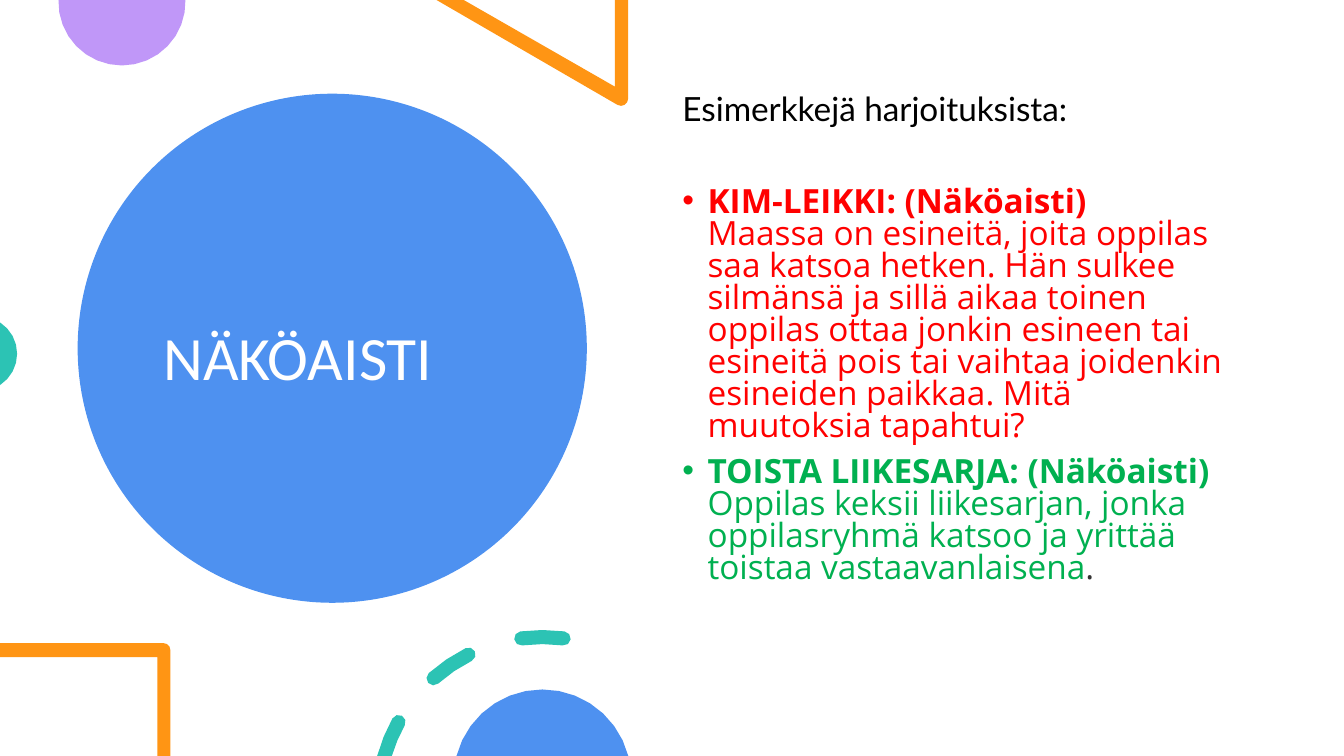
from math import cos, radians, sin

from lxml.etree import SubElement
from pptx import Presentation
from pptx.dml.color import RGBColor
from pptx.enum.shapes import MSO_SHAPE
from pptx.enum.text import MSO_ANCHOR, PP_ALIGN
from pptx.oxml.ns import qn
from pptx.util import Inches, Pt

TITLE = "NÄKÖAISTI"
INTRO = "Esimerkkejä harjoituksista:"
EXERCISES = [
    ("KIM-LEIKKI: (Näköaisti)",
     "Maassa on esineitä, joita oppilas saa katsoa hetken. Hän sulkee silmänsä ja "
     "sillä aikaa toinen oppilas ottaa jonkin esineen tai esineitä pois tai vaihtaa "
     "joidenkin esineiden paikkaa. Mitä muutoksia tapahtui?", "", "FF0000"),
    ("TOISTA LIIKESARJA: (Näköaisti)",
     "Oppilas keksii liikesarjan, jonka oppilasryhmä katsoo ja yrittää toistaa "
     "vastaavanlaisena", ".", "00B050"),
]
BLUE, PURPLE, ORANGE, TEAL = "4E91F0", "C097F8", "FF9514", "2CC3B4"
BODY_SIZE = 23.8
LINE_SPACING = 0.8

# Circles cut by the slide edge: centre, radius, start and end angle, steps, colour
CUT_CIRCLES = [
    ((1.21, 0.02), 0.63, -2, 182, 16, PURPLE),
    ((-0.2, 3.51), 0.37, -57, 57, 8, TEAL),
    ((5.38, 7.72), 0.88, 194.5, 345.5, 14, BLUE),
]
RING_CENTER, RING_RADIUS, DASH_HALF = (5.38, 7.95), 1.63, 0.07
# Dashes: outer start, inner start, end angle, whether the start is rounded
DASHES = [(195.4, 196.8, 208.9, False), (228.5, 228.5, 243.3, True),
          (262.6, 262.6, 277.4, True)]


def color(value):
    return RGBColor.from_string(value)


def arc(center, radius, start, end, steps):
    """Points along an arc; angles in degrees, clockwise from the right."""
    angles = [radians(start + (end - start) * i / steps) for i in range(steps + 1)]
    return [(center[0] + radius * cos(a), center[1] + radius * sin(a)) for a in angles]


def dash_outline(outer_start, inner_start, end, rounded):
    def cap(angle, turn):
        middle = arc(RING_CENTER, RING_RADIUS, angle, angle, 1)[0]
        return arc(middle, DASH_HALF, turn, turn + 180, 4)

    def side(offset, start):
        return arc(RING_CENTER, RING_RADIUS + offset, start, end, 2)

    # The caps already hold the corner points they share with the sides
    points = side(DASH_HALF, outer_start)[:-1] + cap(end, end)
    points += side(-DASH_HALF, inner_start)[1::-1]
    return points + (cap(inner_start, inner_start + 180)[1:-1] if rounded else [])


def paint(shape, fill):
    shape.shadow.inherit = False
    shape.fill.solid()
    shape.fill.fore_color.rgb = color(fill)
    shape.line.fill.background()


def add_outline(page, contours, fill):
    contours = [[(Inches(x), Inches(y)) for x, y in points] for points in contours]
    builder = page.shapes.build_freeform(*contours[0][0])
    builder.add_line_segments(contours[0][1:], close=True)
    for points in contours[1:]:
        builder.move_to(*points[0])
        builder.add_line_segments(points[1:], close=True)
    paint(builder.convert_to_shape(), fill)


def format_run(run, font, size, fill, bold=False):
    run.font.name = font
    run.font.size = Pt(size)
    run.font.color.rgb = color(fill)
    run.font.bold = bold


def add_bullet(para):
    properties = para._p.get_or_add_pPr()
    properties.set("marL", str(Inches(0.25)))
    properties.set("indent", str(-Inches(0.25)))
    SubElement(properties, qn("a:buFont")).set("typeface", "Arial")
    SubElement(properties, qn("a:buChar")).set("char", "•")


def add_title(page):
    title = page.shapes.title
    title.left, title.top = Inches(1.52), Inches(1.35)
    title.width, title.height = Inches(3.54), Inches(4.45)
    frame = title.text_frame
    frame.text = TITLE
    frame.vertical_anchor = MSO_ANCHOR.MIDDLE
    para = frame.paragraphs[0]
    para.alignment = PP_ALIGN.LEFT
    para.line_spacing = 0.9
    format_run(para.runs[0], "Calibri", 44, "FFFFFF")


def add_exercises(page):
    box = page.shapes.add_textbox(Inches(6.67), Inches(0.9), Inches(5.75), Inches(5.35))
    frame = box.text_frame
    frame.word_wrap = True
    frame.text = INTRO
    format_run(frame.paragraphs[0].runs[0], "Lato", BODY_SIZE, "000000")
    for heading, description, ending, fill in EXERCISES:
        para = frame.add_paragraph()
        para.text = f"{heading}\v{description}"
        for run, bold in zip(para.runs, (True, False)):
            format_run(run, "Open Sans", BODY_SIZE, fill, bold)
        if ending:
            span = para.add_run()
            span.text = ending
            format_run(span, "Open Sans", BODY_SIZE, "333333")
    for para, gap in zip(frame.paragraphs, (10, 43, 10)):
        para.line_spacing = LINE_SPACING
        para.space_before = Pt(gap)
    for para in frame.paragraphs[1:]:
        add_bullet(para)


def main():
    deck = Presentation()
    deck.slide_width, deck.slide_height = Inches(13.33), Inches(7.5)
    page = deck.slides.add_slide(deck.slide_layouts[5])

    disc = page.shapes.add_shape(MSO_SHAPE.OVAL, Inches(0.77), Inches(0.93),
                                 Inches(5.05), Inches(5.05))
    paint(disc, BLUE)
    # The title placeholder comes first, so the disc moves behind it
    page.shapes.title._element.addprevious(disc._element)
    add_title(page)

    triangle = [(6.23, 0), (6.1, 0), (6.1, 0.86), (4.6, 0), (4.33, 0)]
    triangle += arc((6.16, 0.98), 0.07, 120, 0, 4)
    square = [(0, 6.38), (0, 6.52), (1.56, 6.52), (1.56, 7.5), (1.69, 7.5)]
    square += arc((1.62, 6.45), 0.07, 0, -90, 3)
    for corner in (triangle, square):
        add_outline(page, [corner], ORANGE)
    for *geometry, fill in CUT_CIRCLES:
        add_outline(page, [arc(*geometry)], fill)
    add_outline(page, [dash_outline(*dash) for dash in DASHES], TEAL)
    add_exercises(page)
    deck.save("out.pptx")


if __name__ == "__main__":
    main()
